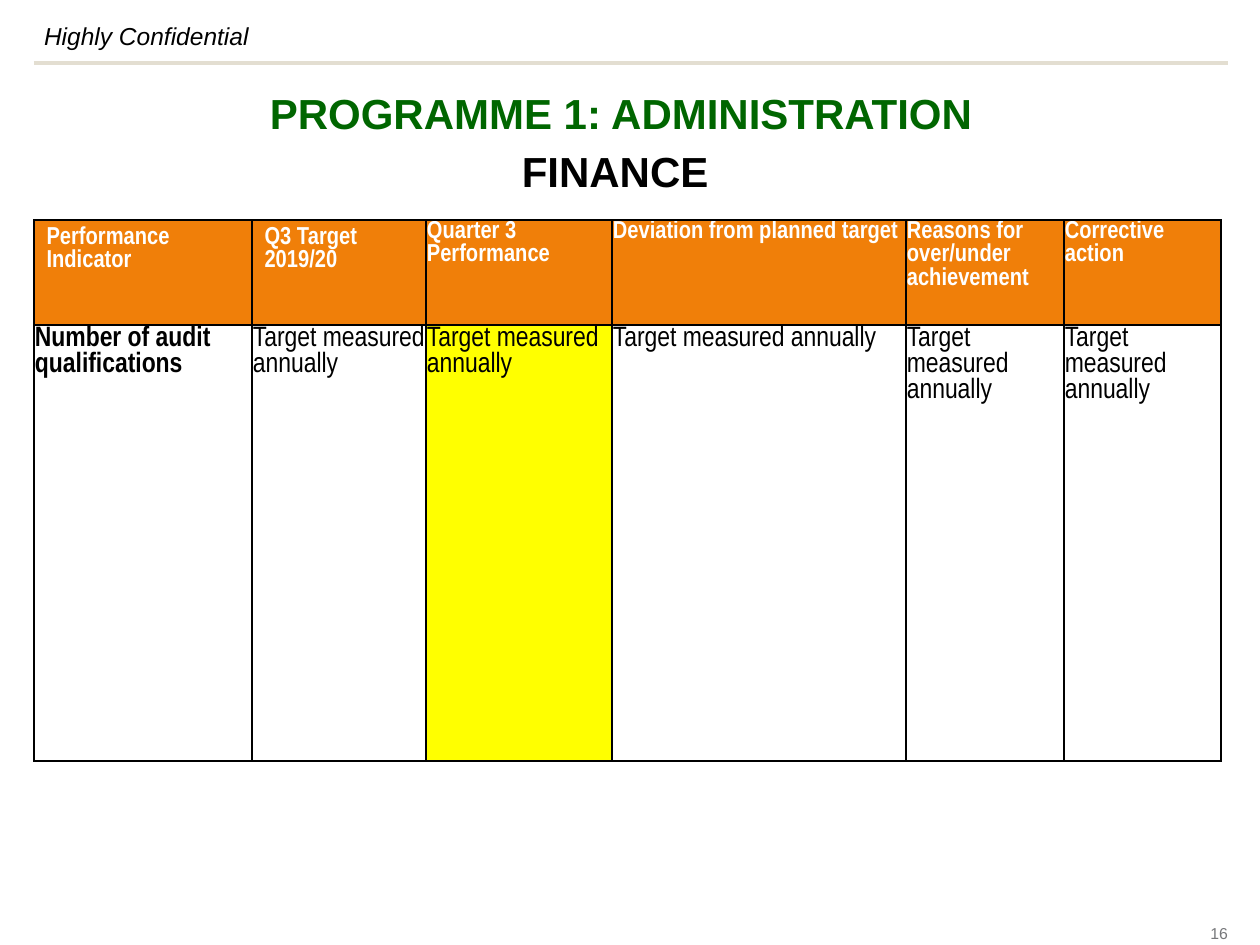
from copy import deepcopy

from lxml.etree import SubElement
from pptx import Presentation
from pptx.dml.color import RGBColor
from pptx.enum.shapes import MSO_CONNECTOR as Connector
from pptx.enum.text import MSO_ANCHOR as Anchor, PP_ALIGN as Align
from pptx.oxml.ns import qn
from pptx.util import Pt

EMU_PER_PX = 914400 // 126

HEADING = [("PROGRAMME 1: ADMINISTRATION", "006600"), ("FINANCE ", "000000")]
CONFIDENTIALITY = "Highly Confidential"
PAGE_NUMBER = "16"
HEADERS = [
    "Performance Indicator",
    "Q3 Target 2019/20",
    "Quarter 3\vPerformance",
    "Deviation from planned target",
    "Reasons for over/under achievement",
    "Corrective action",
]
INDICATOR = ["Number of audit qualifications"] + ["Target measured annually"] * 5
COLUMN_WIDTHS = [218, 174, 186, 294, 158, 157]
ROW_HEIGHTS = [105, 436]
PADDED_HEADERS = 2
RESULT_COLUMN = 2

HEADING_FONT = {"name": "Arial", "size": Pt(24), "bold": True}
CONFIDENTIALITY_FONT = {"name": "Arial", "size": Pt(14), "italic": True}
PAGE_FONT = {"name": "Arial", "size": Pt(9)}
HEADER_FONT = {"name": "Arial Narrow", "size": Pt(14), "bold": True}
BODY_FONT = {"name": "Arial Narrow", "size": Pt(16), "bold": False}


def px(*lengths):
    return [length * EMU_PER_PX for length in lengths]


def rgb(color):
    return RGBColor.from_string(color)


def apply(target, values):
    for name, value in values.items():
        setattr(target, name, value)


def margins(left, top, right, bottom):
    sides = ("margin_left", "margin_top", "margin_right", "margin_bottom")
    return dict(zip(sides, px(left, top, right, bottom)))


def write(paragraph, wording, font, color, **layout):
    paragraph.text = wording
    apply(paragraph, layout)
    for run in paragraph.runs:
        apply(run.font, font)
        run.font.color.rgb = rgb(color)
    for line_break in paragraph._p.findall(qn("a:br")):
        line_break.append(deepcopy(paragraph.runs[0]._r.rPr))


def add_label(slide, box, wording, font, color, inset, anchor, align):
    frame = slide.shapes.add_textbox(*px(*box)).text_frame
    apply(frame, {"word_wrap": True, "vertical_anchor": anchor, **margins(*[inset] * 4)})
    write(frame.paragraphs[0], wording, font, color, alignment=align)


def add_borders(cell):
    properties = cell._tc.get_or_add_tcPr()
    for position, side in enumerate(("lnL", "lnR", "lnT", "lnB")):
        border = SubElement(properties, qn(f"a:{side}"), w=str(Pt(1)))
        properties.insert(position, border)
        solid = SubElement(border, qn("a:solidFill"))
        SubElement(solid, qn("a:srgbClr"), val="000000")


def fill_cell(cell, wording, font, color, fill):
    write(cell.text_frame.paragraphs[0], wording, font, color)
    if fill:
        cell.fill.solid()
        cell.fill.fore_color.rgb = rgb(fill)
    else:
        cell.fill.background()
    add_borders(cell)


def add_results(slide):
    size = sum(COLUMN_WIDTHS), sum(ROW_HEIGHTS)
    results = slide.shapes.add_table(2, len(HEADERS), *px(34, 220, *size)).table
    apply(results, {"first_row": False, "horz_banding": False})
    for column, width in zip(results.columns, px(*COLUMN_WIDTHS)):
        column.width = width
    for row, height in zip(results.rows, px(*ROW_HEIGHTS)):
        row.height = height
    for index, (header, value) in enumerate(zip(HEADERS, INDICATOR)):
        header_cell, value_cell = results.cell(0, index), results.cell(1, index)
        fill_cell(header_cell, header, HEADER_FONT, "FFFFFF", "F07F09")
        value_font = {**BODY_FONT, "bold": index == 0}
        value_fill = "FFFF00" if index == RESULT_COLUMN else None
        fill_cell(value_cell, value, value_font, "000000", value_fill)
        apply(value_cell, margins(1, 1, 1, 0))
        if index >= PADDED_HEADERS:
            apply(header_cell, margins(1, 1, 1, 0))


def add_heading(slide):
    heading = slide.shapes.title
    apply(heading, dict(zip(("left", "top", "width", "height"), px(23, 82, 1196, 112))))
    frame = heading.text_frame
    apply(frame, {"word_wrap": True, "vertical_anchor": Anchor.TOP, **margins(0, 0, 0, 0)})
    for index, (wording, color) in enumerate(HEADING):
        paragraph = frame.add_paragraph() if index else frame.paragraphs[0]
        write(paragraph, wording, HEADING_FONT, color,
              alignment=Align.CENTER, line_spacing=1.1, space_before=Pt(2))


def add_rule(slide):
    rule = slide.shapes.add_connector(Connector.STRAIGHT, *px(34, 63, 1228, 63))
    rule.line.color.rgb = rgb("E3DED1")
    rule.line.width = Pt(2.25)
    SubElement(rule._element.spPr, qn("a:effectLst"))


def main():
    deck = Presentation()
    deck.slide_width, deck.slide_height = px(1260, 945)
    slide = deck.slides.add_slide(deck.slide_layouts[5])
    add_rule(slide)
    add_label(slide, (1192, 924, 36, 18), PAGE_NUMBER, PAGE_FONT, "77787B",
              0, Anchor.MIDDLE, Align.RIGHT)
    add_label(slide, (34, 11, 232, 49), CONFIDENTIALITY, CONFIDENTIALITY_FONT, "000000",
              10, Anchor.TOP, Align.LEFT)
    add_results(slide)
    add_heading(slide)
    deck.save("out.pptx")


if __name__ == "__main__":
    main()
